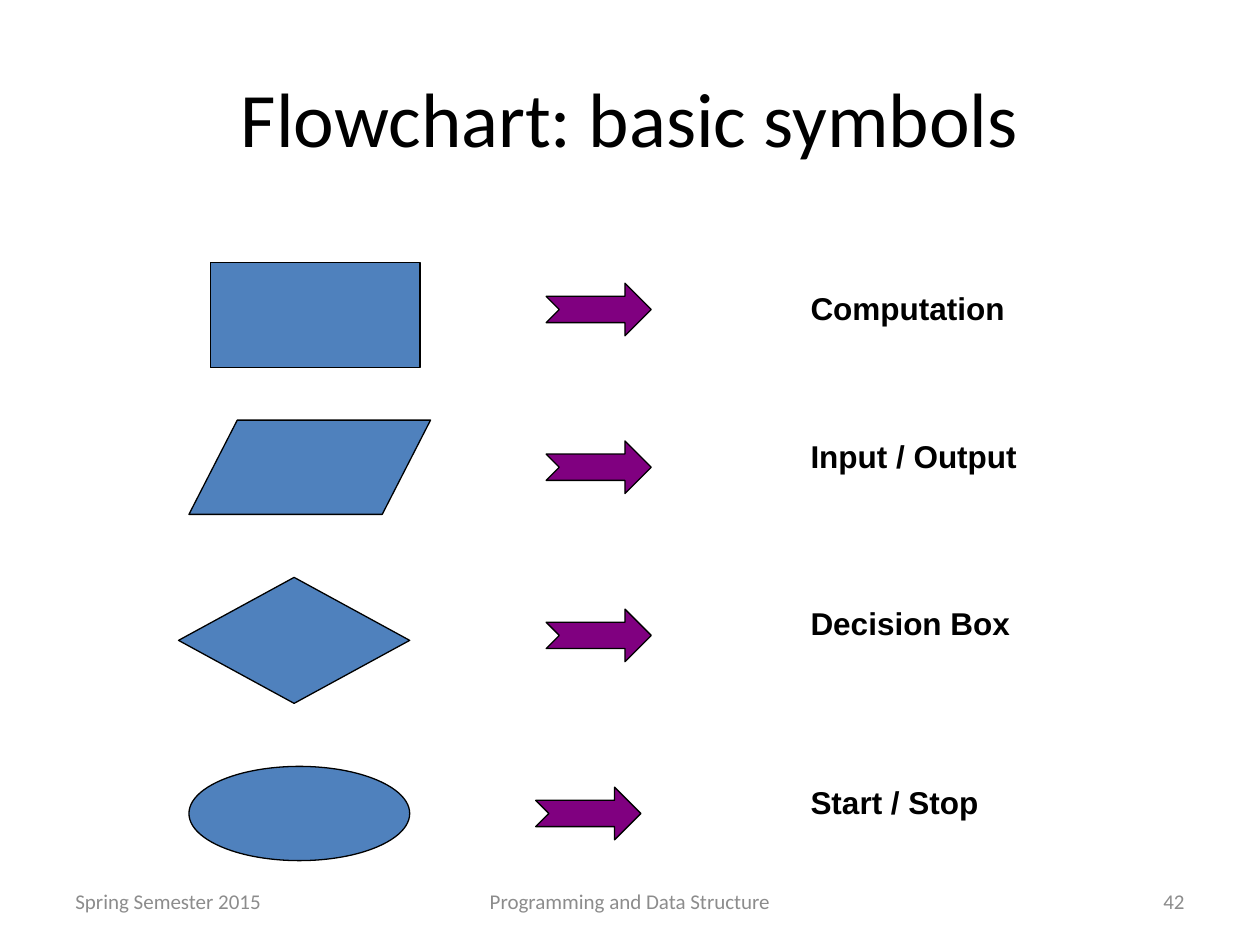
from dataclasses import dataclass

from pptx import Presentation
from pptx.dml.color import RGBColor
from pptx.enum.shapes import MSO_SHAPE
from pptx.enum.text import MSO_ANCHOR, PP_ALIGN
from pptx.util import Cm, Pt

COLORS = {"ink": "000000", "symbol": "4F81BD", "arrow": "800080", "footer": "8C8C8C"}


@dataclass
class Box:
    """A rectangle in centimetres."""
    left: float
    top: float
    width: float
    height: float

    def inner(self, left, top, width, height):
        """Return a box placed relative to this one."""
        return Box(self.left + left, self.top + top, width, height)

    def lengths(self):
        """Return the position and size as slide lengths."""
        return [Cm(n) for n in (self.left, self.top, self.width, self.height)]


def add_text(slide, box, text, size, font="Calibri", color="ink",
             align=PP_ALIGN.LEFT, anchor=MSO_ANCHOR.MIDDLE, bold=False):
    """Place one line of text in the box."""
    frame = slide.shapes.add_textbox(*box.lengths()).text_frame
    frame.word_wrap = True
    frame.vertical_anchor = anchor
    paragraph = frame.paragraphs[0]
    paragraph.text = text
    paragraph.alignment = align
    paragraph.font.name = font
    paragraph.font.size = Pt(size)
    paragraph.font.bold = bold
    paragraph.font.color.rgb = RGBColor.from_string(COLORS[color])


def add_outlined(slide, box, preset, color):
    """Place a filled preset shape with a thin dark outline."""
    shape = slide.shapes.add_shape(preset, *box.lengths())
    shape.shadow.inherit = False
    shape.fill.solid()
    shape.fill.fore_color.rgb = RGBColor.from_string(COLORS[color])
    shape.line.color.rgb = RGBColor.from_string(COLORS["ink"])
    shape.line.width = Pt(0.75)


def add_symbol_row(slide, box, preset, symbol, arrow, label, meaning):
    """Place a flowchart symbol, an arrow and the symbol's meaning."""
    symbol_left, symbol_width = symbol
    add_outlined(slide, box.inner(symbol_left, 0, symbol_width, box.height), preset, "symbol")
    add_outlined(slide, box.inner(*arrow, 2.12, 1.06), MSO_SHAPE.NOTCHED_RIGHT_ARROW, "arrow")
    label_top, label_width = label
    add_text(slide, box.inner(12.49, label_top, label_width, 1.27), meaning, 18,
             font="Arial", anchor=MSO_ANCHOR.TOP, bold=True)


def add_symbols(slide, box):
    """Place the four symbol rows."""
    rows = [
        (0, 2.12, MSO_SHAPE.FLOWCHART_PROCESS, (0.64, 4.23), (7.41, 0.42),
         (0.42, 6.56), "Computation"),
        (3.18, 1.9, MSO_SHAPE.FLOWCHART_DATA, (0.21, 4.87), (7.41, 0.42),
         (0.21, 7.3), "Input / Output"),
        (6.35, 2.54, MSO_SHAPE.FLOWCHART_DECISION, (0, 4.66), (7.41, 0.64),
         (0.42, 6.56), "Decision Box"),
        (10.16, 1.9, MSO_SHAPE.OVAL, (0.21, 4.45), (7.2, 0.42),
         (0.21, 6.56), "Start / Stop"),
    ]
    for top, height, *parts in rows:
        add_symbol_row(slide, box.inner(0, top, box.width, height), *parts)


def add_footer(slide, box):
    """Place the semester, course and slide number."""
    side, middle = 5.93, 8.04
    parts = [
        ("Spring Semester 2015", 0, side, PP_ALIGN.LEFT),
        ("Programming and Data Structure", (box.width - middle) / 2, middle, PP_ALIGN.CENTER),
        ("42", box.width - side, side, PP_ALIGN.RIGHT),
    ]
    for text, left, width, align in parts:
        add_text(slide, box.inner(left, 0, width, box.height), text, 12,
                 color="footer", align=align)


def main():
    """Build and save the slide."""
    deck = Presentation()
    deck.slide_width, deck.slide_height = Cm(25.4), Cm(19.05)
    slide = deck.slides.add_slide(deck.slide_layouts[6])
    add_text(slide, Box(1.27, 0.76, 22.86, 3.18), "Flowchart: basic symbols", 44,
             align=PP_ALIGN.CENTER)
    add_footer(slide, Box(1.27, 17.66, 22.86, 1.01))
    add_symbols(slide, Box(3.6, 5.29, 19.79, 12.06))
    deck.save("out.pptx")


if __name__ == "__main__":
    main()
